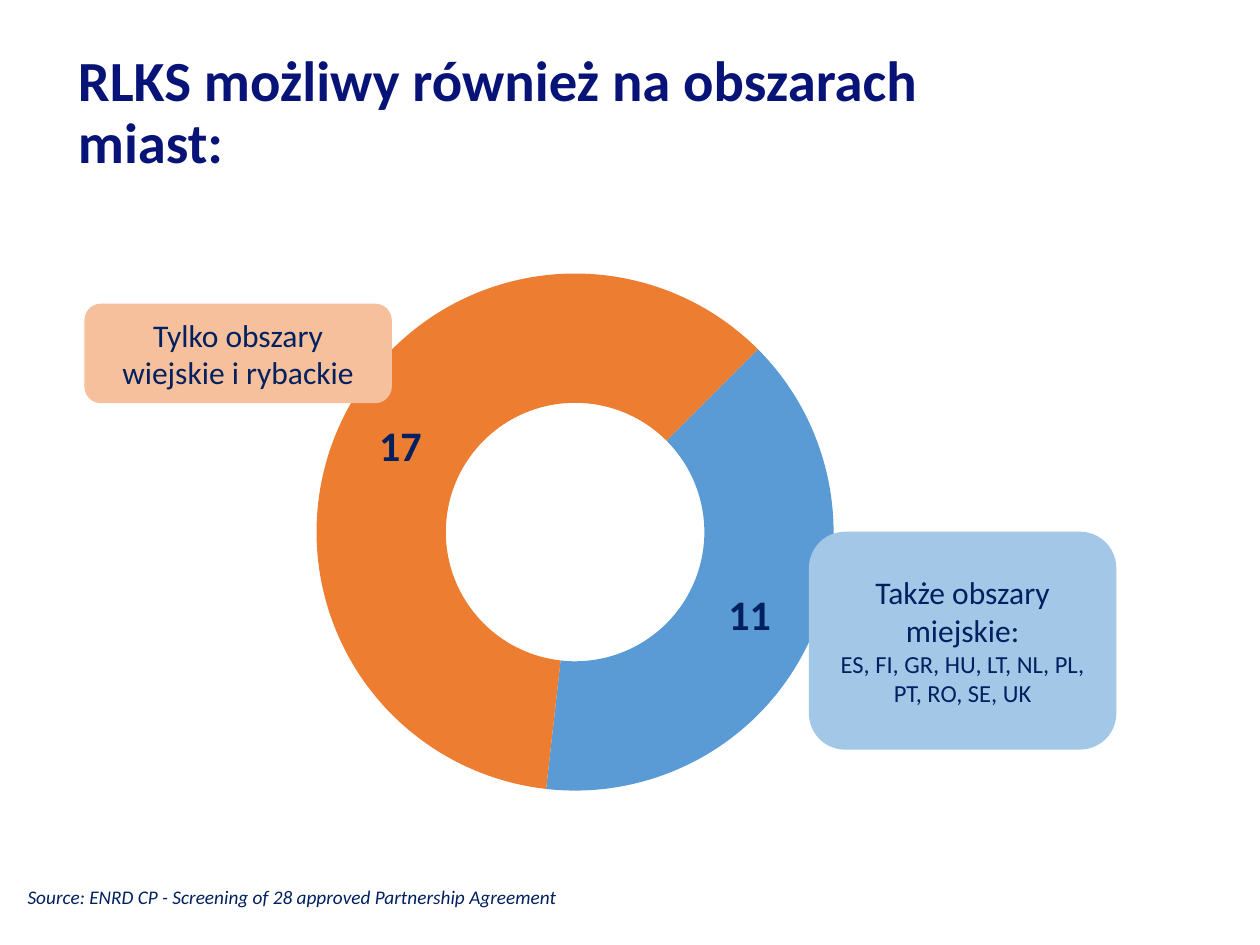
from lxml import etree
from pptx import Presentation
from pptx import util as u
from pptx.chart.data import CategoryChartData
from pptx.dml.color import RGBColor
from pptx.enum import chart as ch, shapes, text
from pptx.oxml.ns import qn

NAVY = RGBColor(0x00, 0x20, 0x60)
TITLE_BLUE = RGBColor(0x07, 0x13, 0x76)
BLACK = RGBColor(0, 0, 0)
BLUE = RGBColor(0x5B, 0x9B, 0xD5)
ORANGE = RGBColor(0xED, 0x7D, 0x31)
PALE_BLUE = RGBColor(0xA3, 0xC7, 0xE7)
PALE_ORANGE = RGBColor(0xF6, 0xC0, 0x9C)
FONT = "Calibri"


def style(font, size, color=NAVY, bold=False, italic=False):
    font.name = FONT
    font.size = u.Pt(size)
    font.color.rgb = color
    font.bold = bold
    font.italic = italic


def add_run(paragraph, words, size, **look):
    run = paragraph.add_run()
    run.text = words
    style(run.font, size, **look)


def add_line(slide, box, words, size, spacing=None, **look):
    frame = slide.shapes.add_textbox(*map(u.Inches, box)).text_frame
    frame.word_wrap = True
    paragraph = frame.paragraphs[0]
    if spacing:
        paragraph.line_spacing = spacing
    add_run(paragraph, words, size, **look)


def place_plot(chart, **edges):
    plot_area = chart.plots[0]._element.getparent()
    for old in plot_area.findall(qn("c:layout")):
        plot_area.remove(old)
    layout = etree.Element(qn("c:layout"))
    manual = etree.SubElement(layout, qn("c:manualLayout"))
    settings = {"layoutTarget": "inner", "xMode": "edge", "yMode": "edge", **edges}
    for tag, value in settings.items():
        etree.SubElement(manual, qn(f"c:{tag}")).set("val", str(value))
    plot_area.insert(0, layout)


def add_ring(slide, box):
    data = CategoryChartData()
    data.categories = ["1", "2"]
    data.add_series("Series 1", (11, 17))
    chart = slide.shapes.add_chart(
        ch.XL_CHART_TYPE.DOUGHNUT, *map(u.Inches, box), data).chart
    chart.has_legend = False
    chart.has_title = False
    style(chart.font, 18, BLACK)
    place_plot(chart, x=0.092, y=0.106, w=0.438, h=0.765)

    ring = chart.plots[0]
    ring._element.find(qn("c:firstSliceAng")).set("val", "45")
    ring.has_data_labels = True
    labels = ring.data_labels
    labels.show_value = True
    labels.show_percentage = False
    style(labels.font, 24, bold=True)
    for index, color in enumerate((BLUE, ORANGE)):
        fill = ring.series[0].points[index].format.fill
        fill.solid()
        fill.fore_color.rgb = color


def add_callout(slide, box, color, lines):
    callout = slide.shapes.add_shape(
        shapes.MSO_SHAPE.ROUNDED_RECTANGLE, *map(u.Inches, box))
    callout.shadow.inherit = False
    callout.fill.solid()
    callout.fill.fore_color.rgb = color
    callout.line.fill.background()
    frame = callout.text_frame
    frame.word_wrap = True
    frame.vertical_anchor = text.MSO_ANCHOR.MIDDLE
    for index, (words, size) in enumerate(lines):
        paragraph = frame.add_paragraph() if index else frame.paragraphs[0]
        paragraph.alignment = text.PP_ALIGN.CENTER
        add_run(paragraph, words, size)


def main():
    deck = Presentation()
    deck.slide_width, deck.slide_height = u.Inches(10), u.Inches(7.5)
    slide = deck.slides.add_slide(deck.slide_layouts[6])
    add_ring(slide, (1.65, 1.6, 9.37, 5.37))
    add_callout(slide, (6.42, 4.22, 2.44, 1.73), PALE_BLUE, [
        ("Także obszary miejskie:", 18),
        ("ES, FI, GR, HU, LT, NL, PL, PT, RO, SE, UK", 14),
    ])
    add_callout(slide, (0.67, 2.41, 2.44, 0.79), PALE_ORANGE, [
        ("Tylko obszary wiejskie i rybackie", 18),
    ])
    add_line(slide, (0.52, 0.37, 7.35, 0.72),
             "RLKS możliwy również na obszarach miast:", 32.4,
             spacing=0.9, color=TITLE_BLUE, bold=True)
    add_line(slide, (0.12, 6.98, 6.22, 0.29),
             "Source: ENRD CP - Screening of 28 approved Partnership Agreement",
             11, italic=True)
    deck.save("out.pptx")


if __name__ == "__main__":
    main()
